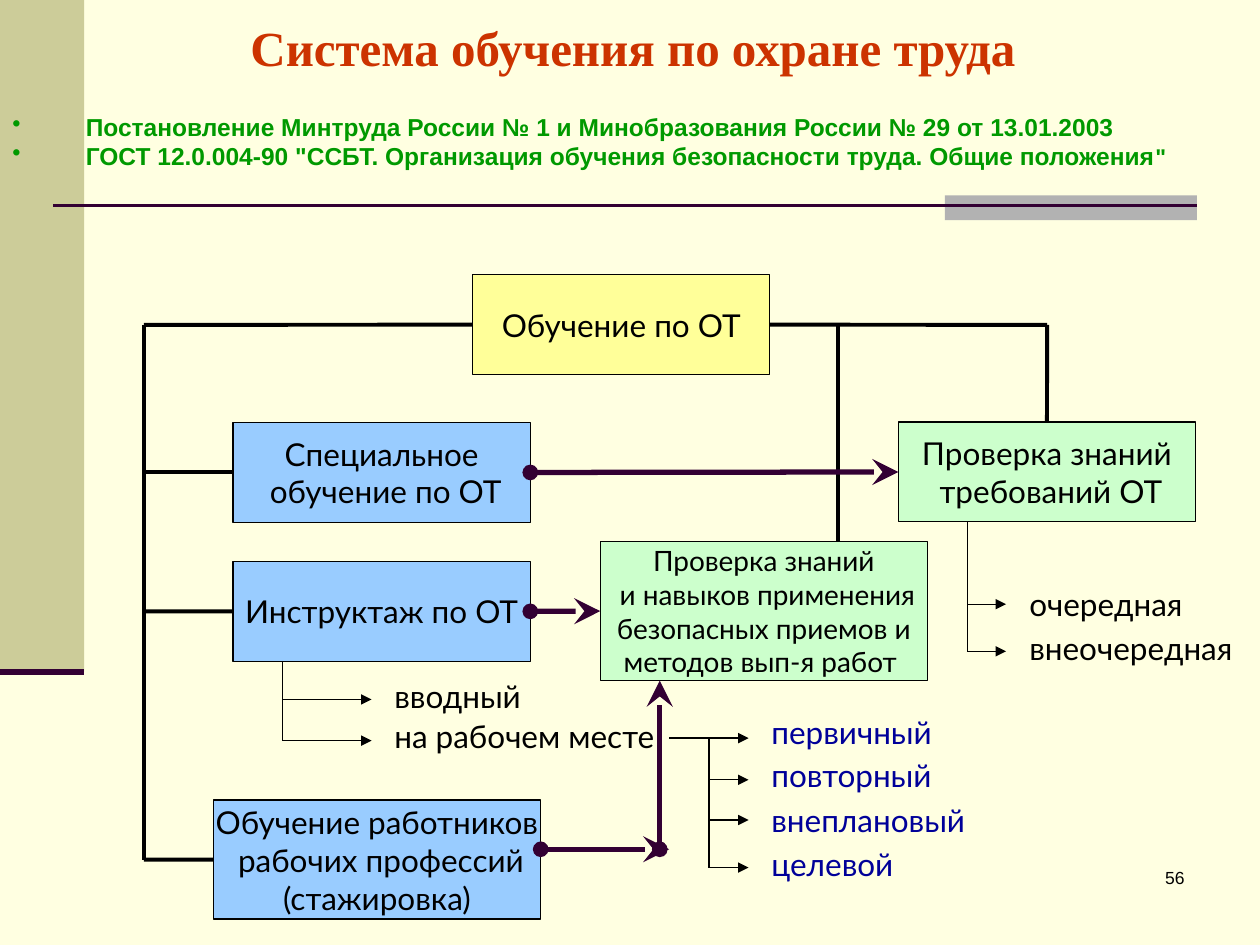
"""Build the slide about the occupational safety training system."""
from lxml import etree
from pptx import Presentation
from pptx.dml.color import RGBColor
from pptx.enum.shapes import MSO_CONNECTOR, MSO_SHAPE
from pptx.enum.text import MSO_ANCHOR, PP_ALIGN
from pptx.oxml.ns import qn
from pptx.util import Cm, Pt

RECT, STRAIGHT = MSO_SHAPE.RECTANGLE, MSO_CONNECTOR.STRAIGHT
LEFT, CENTER, RIGHT = PP_ALIGN.LEFT, PP_ALIGN.CENTER, PP_ALIGN.RIGHT
TOP, MIDDLE = MSO_ANCHOR.TOP, MSO_ANCHOR.MIDDLE
COLORS = {
    "page": "FFFFE1", "olive": "CCCC99", "gray": "B2B2B2", "plum": "330033",
    "black": "000000", "red": "CC3300", "green": "009900", "navy": "000099",
    "yellow": "FFFF99", "mint": "CCFFCC", "blue": "99CCFF",
}

TITLE = "Система обучения по охране труда"
SOURCES = [
    [("Постановление Минтруда России № 1 и Минобразования России № 29 от 13.01.2003", 14)],
    [('ГОСТ 12.0.004-90 "ССБТ. Организация обучения безопасности труда. Общие положения', 14),
     ('"', 13)],
]
BANDS = [(0, 0, 1.7, 13.54, "olive"), (19.05, 3.94, 5.08, 0.5, "gray")]
BOXES = {
    "training": (9.53, 5.54, 5.99, 2.01, "yellow", 18, ["Обучение по ОТ"]),
    "check": (18.11, 8.51, 5.99, 2.01, "mint", 18, ["Проверка знаний", " требований ОТ"]),
    "special": (4.7, 8.52, 5.99, 2.01, "blue", 18, ["Специальное\v обучение по ОТ"]),
    "briefing": (4.7, 11.32, 5.99, 2.01, "blue", 18, ["Инструктаж по ОТ"]),
    "workers": (4.3, 16.13, 6.6, 2.4, "blue", 18,
                ["Обучение работников", " рабочих профессий", "(стажировка)"]),
    "skills": (12.1, 10.92, 6.6, 2.8, "mint", 16,
               ["Проверка знаний", " и навыков применения",
                "безопасных приемов и", "методов вып-я работ "]),
}
BRANCHES = [
    (5.69, 13.33, 7.49, 7.7, "black", [("вводный", 14.1, 13.52), ("на рабочем месте", 14.93, 14.33)]),
    (14.29, 14.88, 15.09, 15.3, "navy",
     [("первичный", 14.88, 14.25), ("повторный", 15.72, 15.12),
      ("внеплановый", 16.53, 16.03), ("целевой", 17.49, 16.92)]),
    (19.5, 10.52, 20.28, 20.5, "black", [("очередная", 12.18, 11.66), ("внеочередная", 13.13, 12.56)]),
]
TRUNK_X, TRUNK_Y, CHECK_X, SKILLS_X = 2.9, 6.55, 21.11, 16.89
THICK = {"color": "black", "width": 2.25}
THIN = {"color": "black", "width": 0.75}
ARROW = {**THIN, "tail": ("triangle", "med")}
FLOW = {"color": "plum", "width": 3, "head": ("oval", "med"), "tail": ("stealth", "lg")}

prs = Presentation()
prs.slide_width, prs.slide_height = Cm(25.4), Cm(19.05)
s = prs.slides.add_slide(prs.slide_layouts[6])


def rgb(name):
    return RGBColor.from_string(COLORS[name])


def write(sp, paragraphs, color, font="Lato", bold=False, align=LEFT, anchor=TOP, wrap=True):
    tf = sp.text_frame
    tf.word_wrap, tf.vertical_anchor = wrap, anchor
    for i, runs in enumerate(paragraphs):
        p = tf.paragraphs[0] if i == 0 else tf.add_paragraph()
        p.alignment = align
        for text, size in runs:
            for j, part in enumerate(text.split("\v")):
                if j:
                    p.add_line_break()
                r = p.add_run()
                r.text = part
                for key, value in {"name": font, "size": Pt(size), "bold": bold}.items():
                    setattr(r.font, key, value)
                r.font.color.rgb = rgb(color)
    return tf


def add_text(x, y, w, h, paragraphs, color, **style):
    sp = s.shapes.add_textbox(Cm(x), Cm(y), Cm(w), Cm(h))
    return write(sp, paragraphs, color, **style)


def add_rect(x, y, w, h, fill, outline=None):
    sp = s.shapes.add_shape(RECT, Cm(x), Cm(y), Cm(w), Cm(h))
    sp.shadow.inherit = False
    sp.fill.solid()
    sp.fill.fore_color.rgb = rgb(fill)
    if outline:
        sp.line.color.rgb = rgb(outline)
        sp.line.width = Pt(0.75)
    else:
        sp.line.fill.background()
    return sp


def add_line(x1, y1, x2, y2, color, width, head=None, tail=None, begin=None, end=None):
    c = s.shapes.add_connector(STRAIGHT, Cm(x1), Cm(y1), Cm(x2), Cm(y2))
    if begin:
        c.begin_connect(*begin)
    if end:
        c.end_connect(*end)
    c.line.color.rgb = rgb(color)
    c.line.width = Pt(width)
    ln = c.line._get_or_add_ln()
    for tag, mark in (("a:headEnd", head), ("a:tailEnd", tail)):
        if mark:
            etree.SubElement(ln, qn(tag), type=mark[0], w=mark[1], len=mark[1])
    etree.SubElement(c._element.spPr, qn("a:effectLst"))


s.background.fill.solid()
s.background.fill.fore_color.rgb = rgb("page")
for band in BANDS:
    add_rect(*band)
add_line(1.07, 4.14, 24.13, 4.14, "plum", 1.5)
add_line(0, 13.54, 1.7, 13.54, "plum", 3.5)

add_text(18.85, 17.35, 5.28, 1.27, [[("56", 10)]], "black", font="Arial", align=RIGHT)
add_text(4.8, 0, 20.6, 1.88, [[(TITLE, 28)]], "red",
         font="Times New Roman", bold=True, anchor=MIDDLE)
tf = add_text(0, 2.13, 26.29, 1.6, SOURCES, "green", font="Arial", bold=True)
for p in tf.paragraphs:
    pPr = p._p.get_or_add_pPr()
    pPr.set("marL", str(Cm(1.48)))
    pPr.set("indent", str(-Cm(1.48)))
    etree.SubElement(pPr, qn("a:buChar"), char="•")

box = {}
for name, (x, y, w, h, fill, size, lines) in BOXES.items():
    box[name] = add_rect(x, y, w, h, fill, "black")
    write(box[name], [[(line, size)] for line in lines], "black",
          align=CENTER, anchor=MIDDLE, wrap=False)

for x, top, tip, text_x, color, items in BRANCHES:
    add_line(x, top, x, items[-1][1], **THIN)
    for text, y, text_y in items:
        start = 13.49 if text == "первичный" else x
        add_line(start, y, tip + (text_x - tip) * 0, y, **ARROW)
        add_text(text_x, text_y, 5.85, 1.02, [[(text, 18)]], color)

add_line(TRUNK_X, TRUNK_Y, 9.53, TRUNK_Y, **THICK, end=(box["training"], 1))
add_line(TRUNK_X, TRUNK_Y, TRUNK_X, 17.33, **THICK)
for name in ("special", "briefing", "workers"):
    x, y, w, h = BOXES[name][:4]
    add_line(TRUNK_X, y + h / 2, x, y + h / 2, **THICK, end=(box[name], 1))
add_line(15.52, TRUNK_Y, CHECK_X, TRUNK_Y, **THICK, begin=(box["training"], 3))
add_line(CHECK_X, TRUNK_Y, CHECK_X, 8.51, **THICK, end=(box["check"], 0))
add_line(SKILLS_X, TRUNK_Y, SKILLS_X, 10.92, **THICK)

add_line(10.69, 9.52, 18.11, 9.52, **FLOW, begin=(box["special"], 3), end=(box["check"], 1))
add_line(10.69, 12.32, 12.1, 12.32, **FLOW, begin=(box["briefing"], 3), end=(box["skills"], 1))
add_line(10.9, 17.12, 13.49, 17.12, **FLOW)
add_line(13.3, 17.12, 13.3, 13.72, **FLOW)

prs.save("out.pptx")
